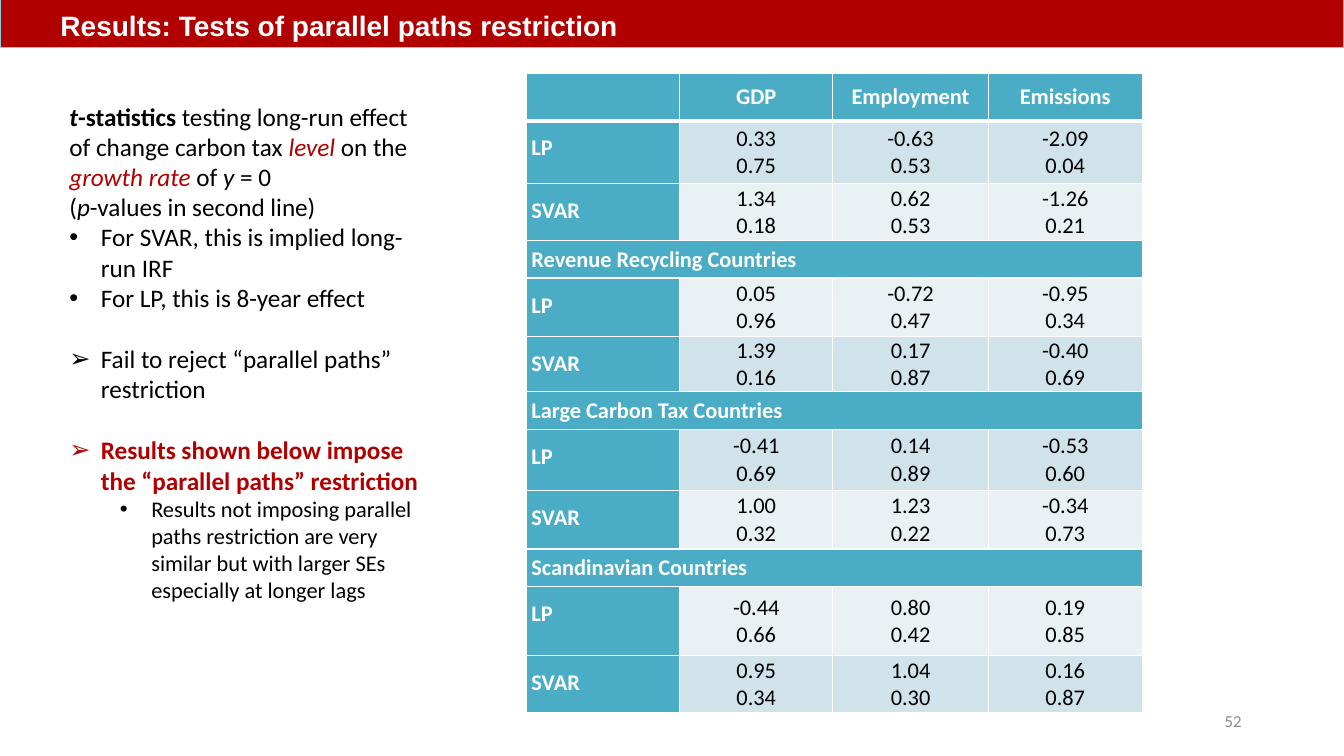
from lxml import etree
from pptx import Presentation
from pptx.dml.color import RGBColor
from pptx.enum.shapes import MSO_SHAPE
from pptx.enum.text import MSO_ANCHOR, PP_ALIGN
from pptx.oxml.ns import qn
from pptx.util import Pt

RECTANGLE = MSO_SHAPE.RECTANGLE
TOP, MIDDLE, BOTTOM = MSO_ANCHOR.TOP, MSO_ANCHOR.MIDDLE, MSO_ANCHOR.BOTTOM
LEFT, CENTER, RIGHT = PP_ALIGN.LEFT, PP_ALIGN.CENTER, PP_ALIGN.RIGHT

WHITE = RGBColor(0xFF, 0xFF, 0xFF)
BLACK = RGBColor(0, 0, 0)
RED = RGBColor(0xB0, 0, 0)
GRAY = RGBColor(0x8C, 0x8C, 0x8C)
PALE_BLUE = RGBColor(0x93, 0xCD, 0xDD)
TEAL = RGBColor(0x4B, 0xAC, 0xC6)
BAND_DARK = RGBColor(0xD0, 0xE3, 0xEA)
BAND_LIGHT = RGBColor(0xE9, 0xF1, 0xF5)

SLIDE_WIDTH, SLIDE_HEIGHT = 960, 540
BLANK_LINE = 22

COLUMN_WIDTHS = [109.5, 109.5, 111, 110]
ROW_HEIGHTS = [33.84, 44.64, 41.04, 26.64, 41.76, 39.6,
               26.64, 43.92, 41.76, 26.64, 49.68, 40.32]

# A one-item row is a section heading; other rows hold t-statistic and p-value
RESULTS = [
    ["", "GDP", "Employment", "Emissions"],
    ["LP", "0.33\n0.75", "-0.63\n0.53", "-2.09\n0.04"],
    ["SVAR", "1.34\n0.18", "0.62\n0.53", "-1.26\n0.21"],
    ["Revenue Recycling Countries"],
    ["LP", "0.05\n0.96", "-0.72\n0.47", "-0.95\n0.34"],
    ["SVAR", "1.39\n0.16", "0.17\n0.87", "-0.40\n0.69"],
    ["Large Carbon Tax Countries"],
    ["LP", "-0.41\n0.69", "0.14\n0.89", "-0.53\n0.60"],
    ["SVAR", "1.00\n0.32", "1.23\n0.22", "-0.34\n0.73"],
    ["Scandinavian Countries"],
    ["LP", "-0.44\n0.66", "0.80\n0.42", "0.19\n0.85"],
    ["SVAR", "0.95\n0.34", "1.04\n0.30", "0.16\n0.87"],
]

# Bullet, indent level, space before, size, then runs of (text, style, colour)
NOTES = [
    ("", 0, 0, 18, [
        ("t", "bi", BLACK), ("-statistics", "b", BLACK),
        (" testing long-run effect of change carbon tax ", "", BLACK),
        ("level", "i", RED), (" on the ", "", BLACK),
        ("growth rate", "i", RED), (" of ", "", BLACK),
        ("y", "i", BLACK), (" = 0", "", BLACK)]),
    ("", 0, 0, 18, [
        ("(", "", BLACK), ("p", "i", BLACK),
        ("-values in second line)", "", BLACK)]),
    ("•", 0, 0, 18, [("For SVAR, this is implied long-run IRF", "", BLACK)]),
    ("•", 0, 0, 18, [("For LP, this is 8-year effect", "", BLACK)]),
    ("➢", 0, BLANK_LINE, 18, [
        ("Fail to reject “parallel paths” restriction", "", BLACK)]),
    ("➢", 0, BLANK_LINE, 18, [
        ("Results shown below impose the “parallel paths” restriction", "b", RED)]),
    ("•", 1, 0, 16, [
        ("Results not imposing parallel paths restriction are very similar "
         "but with larger SEs especially at longer lags", "", BLACK)]),
]


def format_font(font, size, color, bold=False, italic=False, name="Calibri"):
    font.name = name
    font.size = Pt(size)
    font.bold = bold
    font.italic = italic
    font.color.rgb = color


def add_text_box(slide, box):
    text_frame = slide.shapes.add_textbox(*map(Pt, box)).text_frame
    text_frame.word_wrap = True
    return text_frame


def add_title_bar(slide, box):
    bar = slide.shapes.add_shape(RECTANGLE, *map(Pt, box))
    bar.shadow.inherit = False
    bar.fill.solid()
    bar.fill.fore_color.rgb = RED
    bar.line.color.rgb = PALE_BLUE
    bar.line.width = Pt(0)
    text_frame = bar.text_frame
    text_frame.margin_left = Pt(43.2)
    text_frame.vertical_anchor = BOTTOM
    text_frame.text = "Results: Tests of parallel paths restriction"
    paragraph = text_frame.paragraphs[0]
    paragraph.alignment = LEFT
    format_font(paragraph.runs[0].font, 20, WHITE, bold=True, name="Arial")


def set_bullet(paragraph, character, level):
    properties = paragraph._p.get_or_add_pPr()
    properties.set("marL", str(Pt(22.5 + 36 * level)))
    properties.set("indent", str(Pt(-22.5)))
    etree.SubElement(properties, qn("a:buFont"), typeface="Arial")
    etree.SubElement(properties, qn("a:buChar"), char=character)


def add_notes(slide, box):
    text_frame = add_text_box(slide, box)
    for index, (bullet, level, space, size, runs) in enumerate(NOTES):
        paragraph = text_frame.add_paragraph() if index else text_frame.paragraphs[0]
        paragraph.level = level
        paragraph.space_before = Pt(space)
        if bullet:
            set_bullet(paragraph, bullet, level)
        for text, style, color in runs:
            run = paragraph.add_run()
            run.text = text
            format_font(run.font, size, color, "b" in style, "i" in style)


def set_borders(cell, bottom_width):
    properties = cell._tc.get_or_add_tcPr()
    for side, width in (("L", 1), ("R", 1), ("T", 1), ("B", bottom_width)):
        line = etree.SubElement(properties, qn(f"a:ln{side}"), w=str(Pt(width)))
        fill = etree.SubElement(line, qn("a:solidFill"))
        etree.SubElement(fill, qn("a:srgbClr"), val=str(WHITE))


def fill_cell(cell, text, fill, color, alignment, is_label):
    cell.fill.solid()
    cell.fill.fore_color.rgb = fill
    cell.vertical_anchor = TOP if is_label else MIDDLE
    cell.text_frame.text = text
    for paragraph in cell.text_frame.paragraphs:
        paragraph.alignment = alignment
        if is_label:
            paragraph.line_spacing = 1.5
        for run in paragraph.runs:
            format_font(run.font, 16, color, bold=color == WHITE)


def add_results_table(slide, box):
    frame = slide.shapes.add_table(len(RESULTS), len(COLUMN_WIDTHS), *map(Pt, box))
    table = frame.table
    table.first_row = table.horz_banding = False
    for column, width in zip(table.columns, COLUMN_WIDTHS):
        column.width = Pt(width)
    for row_index, values in enumerate(RESULTS):
        table.rows[row_index].height = Pt(ROW_HEIGHTS[row_index])
        is_header, is_section = row_index == 0, len(values) == 1
        band = BAND_DARK if row_index % 2 else BAND_LIGHT
        for column_index in range(len(COLUMN_WIDTHS)):
            cell = table.cell(row_index, column_index)
            cell.margin_left = cell.margin_right = Pt(3.6)
            cell.margin_top = cell.margin_bottom = 0
            set_borders(cell, 3 if is_header else 1)
        if is_section:
            table.cell(row_index, 0).merge(table.cell(row_index, len(COLUMN_WIDTHS) - 1))
        for column_index, text in enumerate(values):
            is_teal = is_header or column_index == 0
            fill_cell(table.cell(row_index, column_index), text,
                      TEAL if is_teal else band, WHITE if is_teal else BLACK,
                      CENTER if column_index else LEFT,
                      column_index == 0 and not is_header and not is_section)


def add_slide_number(slide, box):
    text_frame = add_text_box(slide, box)
    text_frame.vertical_anchor = MIDDLE
    text_frame.text = "52"
    paragraph = text_frame.paragraphs[0]
    paragraph.alignment = RIGHT
    format_font(paragraph.runs[0].font, 12, GRAY)


def main():
    presentation = Presentation()
    presentation.slide_width = Pt(SLIDE_WIDTH)
    presentation.slide_height = Pt(SLIDE_HEIGHT)
    slide = presentation.slides.add_slide(presentation.slide_layouts[6])
    add_slide_number(slide, (678, 500.5, 216, 28.75))
    add_title_bar(slide, (0, 0, SLIDE_WIDTH, 33.84))
    add_results_table(slide, (376, 52.5, sum(COLUMN_WIDTHS), sum(ROW_HEIGHTS)))
    add_notes(slide, (42.5, 68.5, 272, 368.5))
    presentation.save("out.pptx")


if __name__ == "__main__":
    main()
